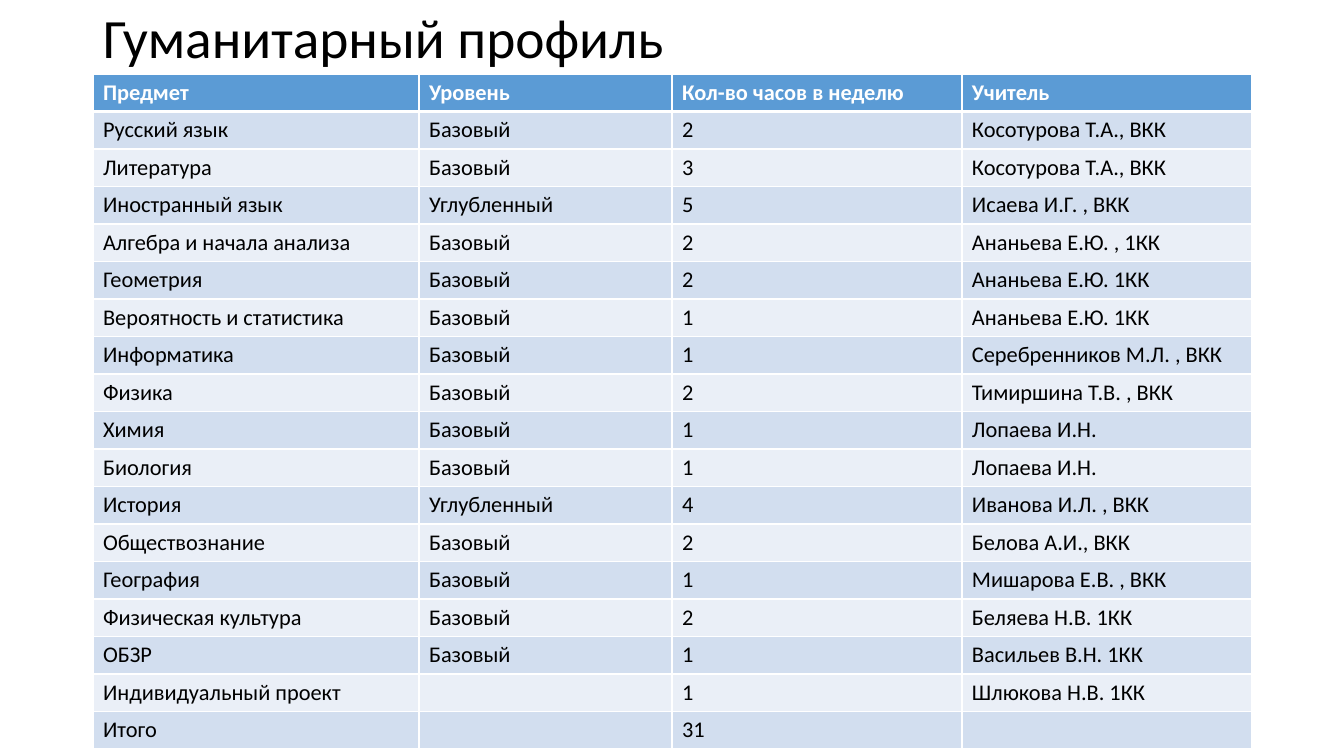
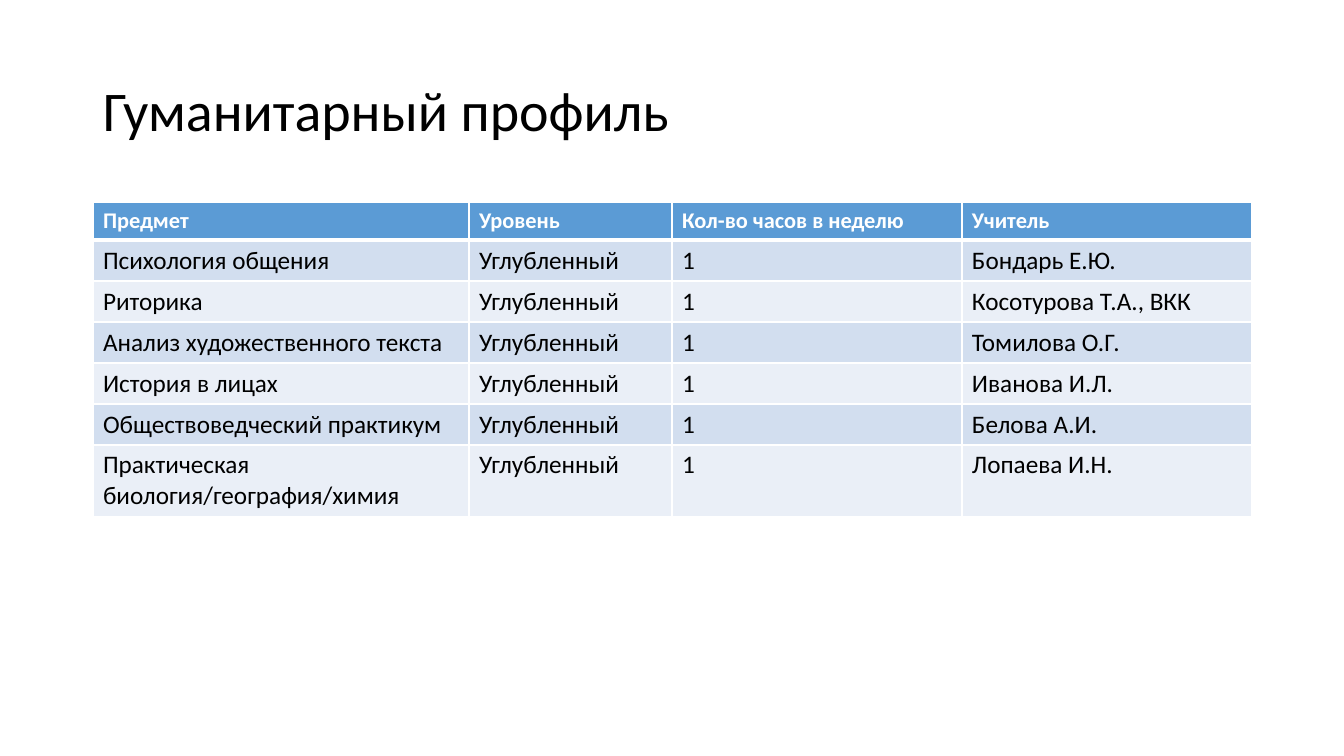
from lxml import etree
from pptx import Presentation
from pptx.dml.color import RGBColor
from pptx.enum import text as enums
from pptx.oxml import ns
from pptx.util import Pt

PX = 914400 / 100.8  # EMU in one px
FONT = "Calibri"
BLACK, WHITE, HEADER_BLUE = "000000", "FFFFFF", "5B9BD5"
BANDS = ["D2DEEF", "EAEFF7"]
LEFT, WIDTH = 93, 1159
TITLE = "Гуманитарный профиль"
HEADINGS = ("Предмет", "Уровень", "Кол-во часов в неделю", "Учитель")
BASE, DEEP = "Базовый", "Углубленный"

SLIDES = [
    dict(
        title_top=17, title_height=48, title_size=39.6,
        table_top=74, columns=[326, 253, 290, 290],
        heights=[37] * 18, size=16,
        rows=[
            ("Русский язык", BASE, "2", "Косотурова Т.А., ВКК"),
            ("Литература", BASE, "3", "Косотурова Т.А., ВКК"),
            ("Иностранный язык", DEEP, "5", "Исаева И.Г. , ВКК"),
            ("Алгебра и начала анализа", BASE, "2", "Ананьева Е.Ю. , 1КК"),
            ("Геометрия", BASE, "2", "Ананьева Е.Ю. 1КК"),
            ("Вероятность и статистика", BASE, "1", "Ананьева Е.Ю. 1КК"),
            ("Информатика", BASE, "1", "Серебренников М.Л. , ВКК"),
            ("Физика", BASE, "2", "Тимиршина Т.В. , ВКК"),
            ("Химия", BASE, "1", "Лопаева И.Н."),
            ("Биология", BASE, "1", "Лопаева И.Н."),
            ("История", DEEP, "4", "Иванова И.Л. , ВКК"),
            ("Обществознание", BASE, "2", "Белова А.И., ВКК"),
            ("География", BASE, "1", "Мишарова Е.В. , ВКК"),
            ("Физическая культура", BASE, "2", "Беляева Н.В. 1КК"),
            ("ОБЗР", BASE, "1", "Васильев В.Н. 1КК"),
            ("Индивидуальный проект", "", "1", "Шлюкова Н.В. 1КК"),
            ("Итого", "", "31", ""),
        ],
    ),
    dict(
        title_top=40, title_height=146, title_size=40,
        table_top=202, columns=[376, 203, 290, 290],
        heights=[38] + [41] * 5 + [71], size=18,
        rows=[
            ("Психология общения", DEEP, "1", "Бондарь Е.Ю."),
            ("Риторика", DEEP, "1", "Косотурова Т.А., ВКК"),
            ("Анализ художественного текста", DEEP, "1", "Томилова О.Г."),
            ("История в лицах", DEEP, "1", "Иванова И.Л."),
            ("Обществоведческий практикум", DEEP, "1", "Белова А.И."),
            ("Практическая биология/география/химия", DEEP, "1", "Лопаева И.Н."),
        ],
    ),
]


def write(frame, words, size, color=BLACK, bold=False, spacing=1.0):
    para = frame.paragraphs[0]
    para.line_spacing = spacing
    if not words:  # an empty cell keeps the row's text size
        end = etree.SubElement(para._p, ns.qn("a:endParaRPr"))
        end.set("sz", str(size * 100))
        return
    span = para.add_run()
    span.text = words
    span.font.name = FONT
    span.font.size = Pt(size)
    span.font.bold = bold
    span.font.color.rgb = RGBColor.from_string(color)


def style_cell(cell, fill, top, bottom):
    cell.fill.solid()
    cell.fill.fore_color.rgb = RGBColor.from_string(fill)
    # Borders come before the fill in the cell properties
    properties = cell._tc.get_or_add_tcPr()
    sides = [("lnL", 1), ("lnR", 1), ("lnT", top), ("lnB", bottom)]
    for position, (side, width) in enumerate(sides):
        line = etree.Element(ns.qn("a:" + side), w=str(Pt(width)))
        paint = etree.SubElement(line, ns.qn("a:solidFill"))
        etree.SubElement(paint, ns.qn("a:srgbClr"), val=WHITE)
        properties.insert(position, line)


deck = Presentation()
deck.slide_width, deck.slide_height = round(1344 * PX), round(756 * PX)

for plan in SLIDES:
    page = deck.slides.add_slide(deck.slide_layouts[6])

    # Title
    box = page.shapes.add_textbox(*(round(n * PX) for n in (
        LEFT, plan["title_top"], WIDTH, plan["title_height"])))
    box.text_frame.word_wrap = True
    box.text_frame.auto_size = enums.MSO_AUTO_SIZE.NONE
    box.text_frame.vertical_anchor = enums.MSO_ANCHOR.MIDDLE
    write(box.text_frame, TITLE, plan["title_size"], spacing=0.9)

    # Table grid
    rows = [HEADINGS] + plan["rows"]
    table = page.shapes.add_table(len(rows), len(HEADINGS), *(round(n * PX) for n in (
        LEFT, plan["table_top"], WIDTH, sum(plan["heights"])))).table
    for column, width in zip(table.columns, plan["columns"]):
        column.width = round(width * PX)
    for row, height in zip(table.rows, plan["heights"]):
        row.height = round(height * PX)

    # Header and banded rows, with a thick rule between them
    for r, row in enumerate(rows):
        for c, words in enumerate(row):
            cell = table.cell(r, c)
            if r == 0:
                style_cell(cell, HEADER_BLUE, top=1, bottom=3)
                write(cell.text_frame, words, 16, color=WHITE, bold=True)
            else:
                style_cell(cell, BANDS[(r - 1) % 2], top=3 if r == 1 else 1, bottom=1)
                write(cell.text_frame, words, plan["size"])

deck.save("out.pptx")
